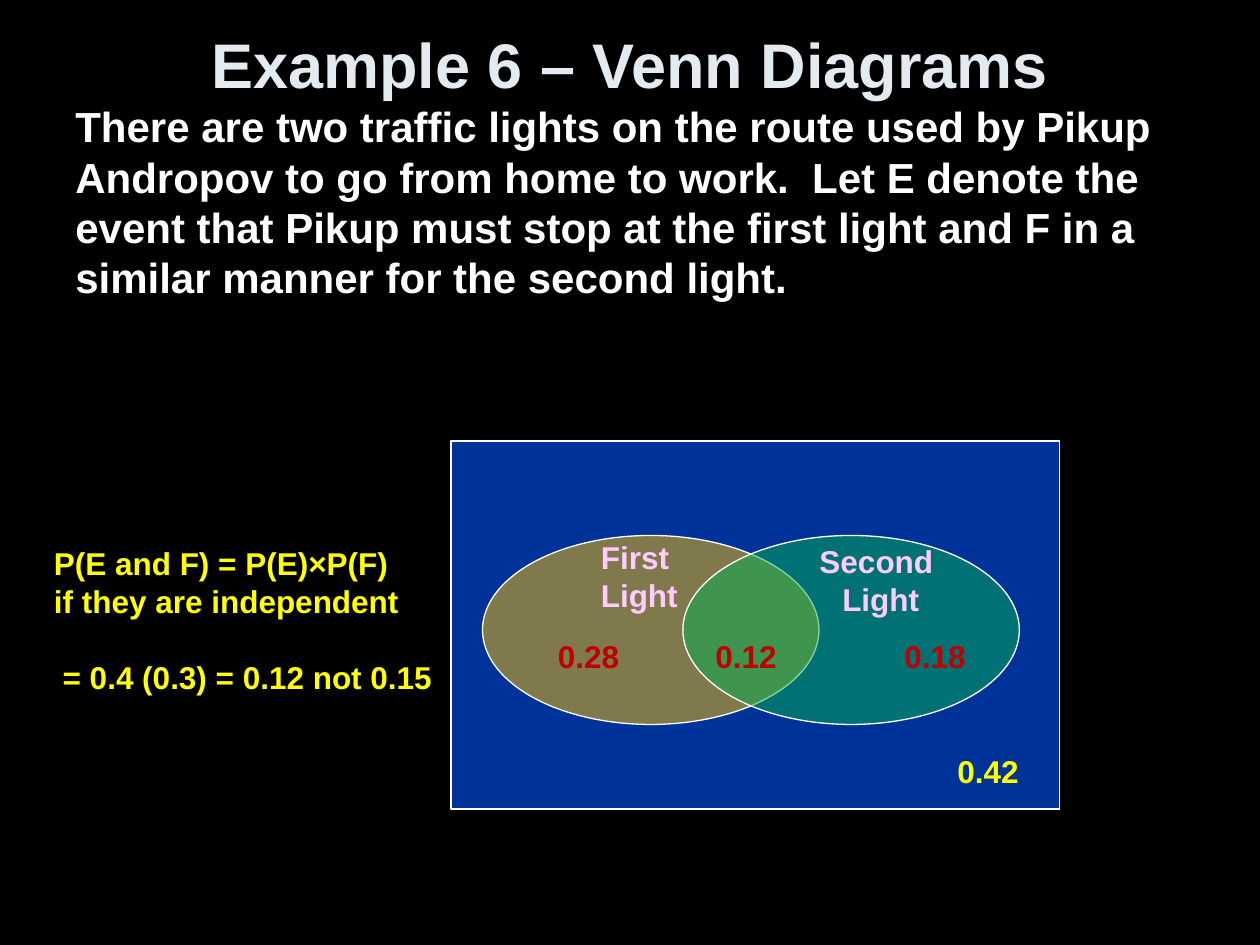
from dataclasses import dataclass

from lxml import etree
from pptx import Presentation
from pptx.dml.color import RGBColor
from pptx.enum.shapes import MSO_SHAPE
from pptx.enum.text import MSO_ANCHOR, PP_ALIGN
from pptx.oxml.ns import qn
from pptx.util import Inches, Pt

RECTANGLE, OVAL = MSO_SHAPE.RECTANGLE, MSO_SHAPE.OVAL
LEFT, CENTER = PP_ALIGN.LEFT, PP_ALIGN.CENTER
TOP, MIDDLE = MSO_ANCHOR.TOP, MSO_ANCHOR.MIDDLE


@dataclass(frozen=True)
class Theme:
    font: str = "Arial"
    background: str = "000000"
    title: str = "E3EBF1"
    body: str = "FFFFFF"
    outline: str = "FFFFFF"
    universe: str = "003399"
    first_set: str = "FFC000"
    second_set: str = "00B050"
    probability: str = "C00000"
    accent: str = "FFFF00"
    set_name: str = "FFCCFF"
    title_size: int = 36
    body_size: int = 24
    label_size: int = 18


THEME = Theme()


def add_text(slide, box, lines, color, size=THEME.label_size, align=LEFT,
             anchor=TOP, wrap=False, gaps=None):
    """Place lines as paragraphs; gaps maps a line index to its space before."""
    text_box = slide.shapes.add_textbox(*(Inches(length) for length in box))
    frame = text_box.text_frame
    frame.word_wrap = wrap
    frame.vertical_anchor = anchor
    for index, line in enumerate(lines):
        paragraph = frame.add_paragraph() if index else frame.paragraphs[0]
        paragraph.text = line
        paragraph.alignment = align
        paragraph.space_before = Pt((gaps or {}).get(index, 0))
        for run in paragraph.runs:
            run.font.name = THEME.font
            run.font.size = Pt(size)
            run.font.bold = True
            run.font.color.rgb = RGBColor.from_string(color)


def add_region(slide, kind, box, color, opacity=100):
    shape = slide.shapes.add_shape(kind, *(Inches(length) for length in box))
    shape.shadow.inherit = False
    shape.fill.solid()
    shape.fill.fore_color.rgb = RGBColor.from_string(color)
    shape.line.color.rgb = RGBColor.from_string(THEME.outline)
    shape.line.width = Pt(0.75)
    if opacity < 100:
        fill_color = shape.fill._xPr.find(qn("a:solidFill"))[0]
        alpha = etree.SubElement(fill_color, qn("a:alpha"))
        alpha.set("val", str(opacity * 1000))


def add_heading(slide, box):
    add_text(slide, box, ["Example 6 – Venn Diagrams"], THEME.title,
             size=THEME.title_size, align=CENTER, anchor=MIDDLE, wrap=True)


def add_problem(slide, box):
    statement = (
        "There are two traffic lights on the route used by Pikup Andropov to go "
        "from home to work.  Let E denote the event that Pikup must stop at the "
        "first light and F in a similar manner for the second light.")
    add_text(slide, box, [statement], THEME.body, size=THEME.body_size, wrap=True)


def add_independence_check(slide, box):
    add_text(slide, box,
             ["P(E and F) = P(E)×P(F)", "if they are independent",
              " = 0.4 (0.3) = 0.12 not 0.15"],
             THEME.accent, gaps={2: 21.6})


def add_venn_diagram(slide, box):
    left, top, width, height = box
    add_region(slide, RECTANGLE, box, THEME.universe)
    for offset, color in ((0.25, THEME.first_set), (1.84, THEME.second_set)):
        add_region(slide, OVAL, (left + offset, top + 0.75, 2.67, 1.5),
                   color, opacity=50)

    probabilities = [
        ("0.28", 0.75, 1.51, THEME.probability),
        ("0.12", 2.0, 1.51, THEME.probability),
        ("0.18", 3.5, 1.51, THEME.probability),
        ("0.42", 3.92, 2.42, THEME.accent),
    ]
    for value, across, down, color in probabilities:
        add_text(slide, (left + across, top + down, 0.69, 0.4), [value], color)

    add_text(slide, (left + 1.09, top + 0.72, 0.82, 0.71), ["First", "Light"],
             THEME.set_name)
    add_text(slide, (left + 2.82, top + 0.75, 1.18, 0.71), ["Second \vLight"],
             THEME.set_name, align=CENTER)


def main():
    presentation = Presentation()
    presentation.slide_width = Inches(10)
    presentation.slide_height = Inches(7.5)
    slide = presentation.slides.add_slide(presentation.slide_layouts[6])
    background = slide.background.fill
    background.solid()
    background.fore_color.rgb = RGBColor.from_string(THEME.background)

    add_heading(slide, (0.5, 0.13, 9, 0.75))
    add_problem(slide, (0.5, 0.75, 9, 6.33))
    add_venn_diagram(slide, (3.58, 3.5, 4.83, 2.92))
    add_independence_check(slide, (0.33, 4.27, 3.23, 1.31))
    presentation.save("out.pptx")


if __name__ == "__main__":
    main()
